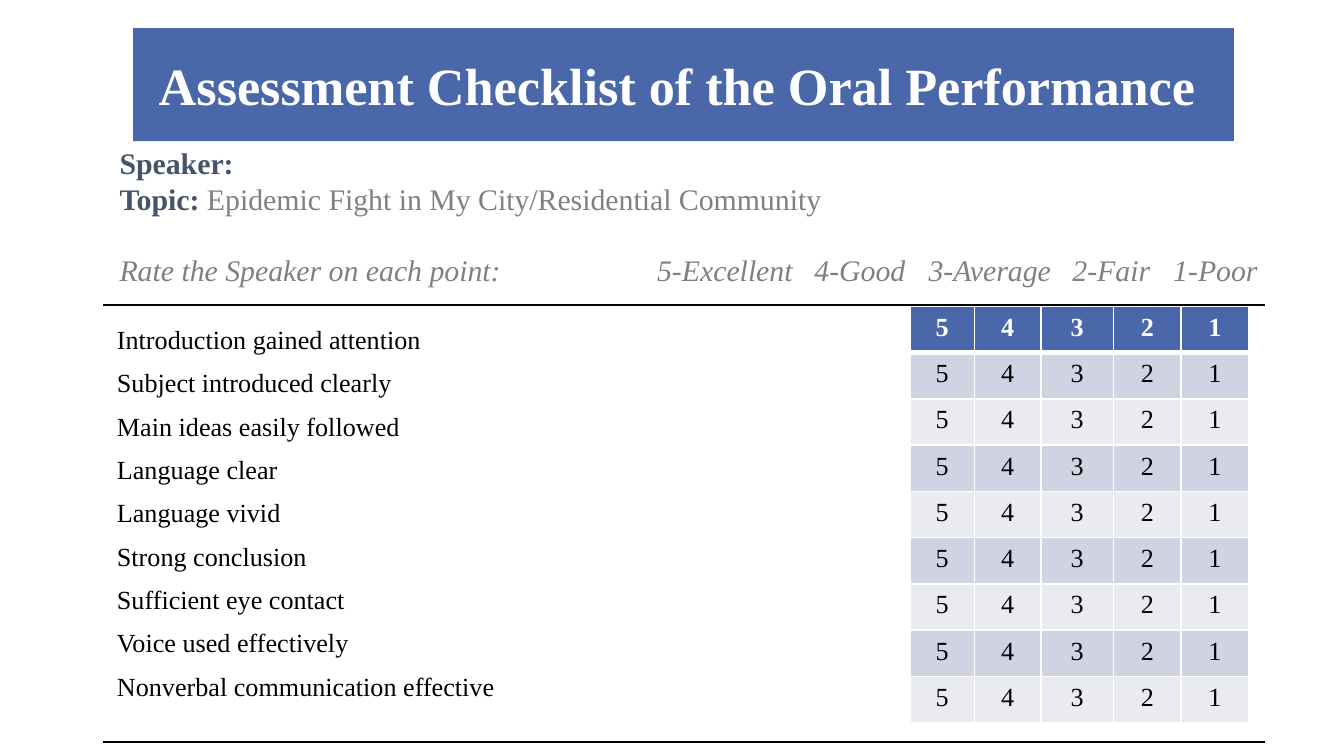
from itertools import product

from lxml import etree
from pptx import Presentation
from pptx import util as u
from pptx.dml.color import RGBColor
from pptx.enum import text
from pptx.oxml.ns import qn

COLORS = {"banner": "4A67AA", "white": "FFFFFF", "label": "44546A", "muted": "808080",
          "ink": "000000", "band_dark": "D0D3E2", "band_light": "E9EBF1"}
FONT = "Times New Roman"
CRITERIA = ["Introduction gained attention", "Subject introduced clearly",
            "Main ideas easily followed", "Language clear", "Language vivid",
            "Strong conclusion", "Sufficient eye contact", "Voice used effectively",
            "Nonverbal communication effective"]
SCALE = {"5-Excellent": 4.0, "4-Good": 5.17, "3-Average": 6.02, "2-Fair": 7.09, "1-Poor": 7.84}
SCORE_WIDTHS = [0.48, 0.49, 0.54, 0.5, 0.5]


def inches(box):
    return [u.Inches(length) for length in box]


def add_run(paragraph, words, size, color, bold=False, italic=False):
    run = paragraph.add_run()
    run.text = words
    font = run.font
    font.name, font.size, font.bold, font.italic = FONT, u.Pt(size), bold, italic
    font.color.rgb = RGBColor.from_string(COLORS[color])


def style_cell(cell, fill, borders):
    """Borders map a side (L, R, T, B) to a (color, points) pair, or None for no line."""
    properties = cell._tc.get_or_add_tcPr()
    for side in "LRTB":
        line = etree.SubElement(properties, qn(f"a:ln{side}"))
        if borders.get(side) is None:
            etree.SubElement(line, qn("a:noFill"))
            continue
        color, points = borders[side]
        line.set("w", str(u.Pt(points)))
        solid = etree.SubElement(line, qn("a:solidFill"))
        etree.SubElement(solid, qn("a:srgbClr"), val=COLORS[color])
    cell.fill.solid()
    cell.fill.fore_color.rgb = RGBColor.from_string(COLORS[fill])


def add_plain_table(slide, rows, columns, box):
    table = slide.shapes.add_table(rows, columns, *inches(box)).table
    table.first_row = table.horz_banding = False
    return table


def add_banner(slide, box):
    banner = slide.shapes.title
    banner.left, banner.top, banner.width, banner.height = inches(box)
    banner.fill.solid()
    banner.fill.fore_color.rgb = RGBColor.from_string(COLORS["banner"])
    frame = banner.text_frame
    frame.auto_size = text.MSO_AUTO_SIZE.NONE
    frame.vertical_anchor = text.MSO_ANCHOR.MIDDLE
    heading = frame.paragraphs[0]
    heading.alignment = text.PP_ALIGN.CENTER
    add_run(heading, "Assessment Checklist of the Oral Performance ", 28, "white", bold=True)


def add_speaker_details(slide, box):
    frame = slide.shapes.add_textbox(*inches(box)).text_frame
    frame.word_wrap = True
    frame.vertical_anchor = text.MSO_ANCHOR.MIDDLE
    frame.margin_left = frame.margin_right = u.Inches(0.03)
    frame.margin_top = frame.margin_bottom = u.Inches(0.03)
    speaker, topic, rating = frame.paragraphs[0], frame.add_paragraph(), frame.add_paragraph()

    # Rating scale set on tab stops
    rating_properties = rating._p.get_or_add_pPr()
    stops = etree.SubElement(rating_properties, qn("a:tabLst"))
    for position in SCALE.values():
        etree.SubElement(stops, qn("a:tab"), pos=str(u.Inches(position)), algn="l")
    rating.space_before = u.Pt(19)

    add_run(speaker, "Speaker:", 16, "label", bold=True)
    add_run(topic, "Topic: ", 16, "label", bold=True)
    add_run(topic, "Epidemic Fight in My City/Residential Community", 16, "muted")
    prompt = "\t".join(["Rate the Speaker on each point:", *SCALE])
    add_run(rating, prompt, 16, "muted", italic=True)


def add_criteria(slide, box):
    cell = add_plain_table(slide, 1, 1, box).cell(0, 0)
    rule = ("ink", 1)
    style_cell(cell, "white", {"T": rule, "B": rule})
    frame = cell.text_frame
    for index, criterion in enumerate(CRITERIA):
        paragraph = frame.add_paragraph() if index else frame.paragraphs[0]
        paragraph.line_spacing = 1.5
        add_run(paragraph, criterion, 14, "ink")


def add_score_grid(slide, box):
    rows, columns = len(CRITERIA), len(SCORE_WIDTHS)
    table = add_plain_table(slide, rows, columns, box)
    for column, width in zip(table.columns, SCORE_WIDTHS):
        column.width = u.Inches(box[2] * width / sum(SCORE_WIDTHS))
    for row, column in product(range(rows), range(columns)):
        header = row == 0
        fill = "banner" if header else ("band_dark" if row % 2 else "band_light")
        borders = dict.fromkeys("LRTB", ("white", 1))
        if header:
            borders["B"] = ("white", 3)
        elif row == 1:
            borders["T"] = ("white", 3)
        cell = table.cell(row, column)
        style_cell(cell, fill, borders)
        score = cell.text_frame.paragraphs[0]
        score.alignment = text.PP_ALIGN.CENTER
        add_run(score, str(columns - column), 14, "white" if header else "ink", bold=header)


def main():
    deck = Presentation()
    # Widescreen, 16 to 9
    deck.slide_width = u.Inches(10)
    deck.slide_height = deck.slide_width * 9 // 16
    slide = deck.slides.add_slide(deck.slide_layouts[5])
    add_banner(slide, (0.99, 0.21, 8.19, 0.84))
    add_speaker_details(slide, (0.86, 1.04, 8.63, 1.14))
    add_criteria(slide, (0.77, 2.27, 8.64, 3.25))
    add_score_grid(slide, (6.77, 2.28, 2.52, 3.1))
    deck.save("out.pptx")


if __name__ == "__main__":
    main()
